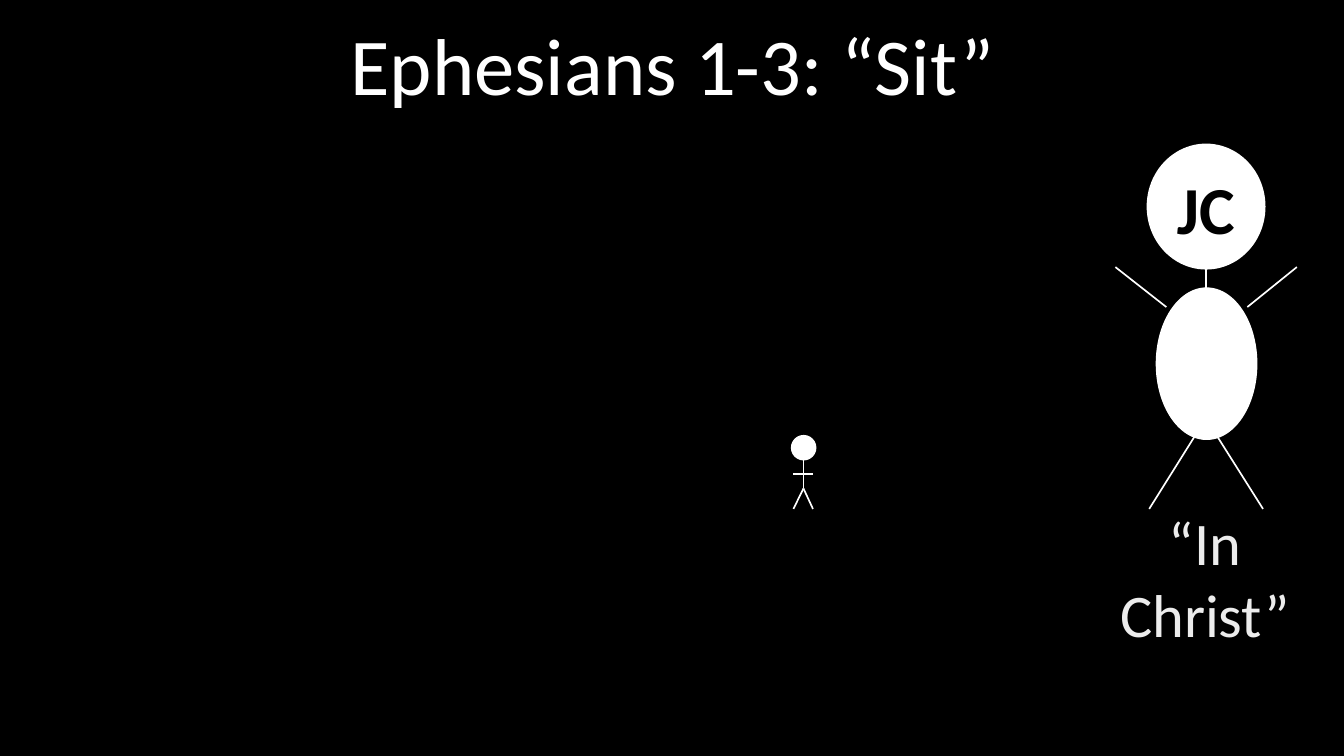
from pptx import Presentation
from pptx import util as u
from pptx.dml.color import RGBColor
from pptx.enum import shapes, text
from pptx.oxml.ns import qn
from lxml import etree

COLORS = {"black": "000000", "white": "FFFFFF", "soft": "ECECEC"}

deck = Presentation()
deck.slide_width, deck.slide_height = u.Cm(28.22), u.Cm(15.88)
page = deck.slides.add_slide(deck.slide_layouts[6])
page.background.fill.solid()
page.background.fill.fore_color.rgb = RGBColor.from_string(COLORS["black"])
white = RGBColor.from_string(COLORS["white"])


def add_text(words, left, top, width, height, size, color, bold=False):
    box = page.shapes.add_textbox(u.Cm(left), u.Cm(top), u.Cm(width), u.Cm(height))
    frame = box.text_frame
    frame.word_wrap = True
    frame.vertical_anchor = text.MSO_ANCHOR.MIDDLE
    para = frame.paragraphs[0]
    para.alignment = text.PP_ALIGN.CENTER
    span = para.add_run()
    span.text = words
    span.font.name = "Calibri"
    span.font.size = u.Pt(size)
    span.font.bold = bold
    span.font.color.rgb = RGBColor.from_string(COLORS[color])


believer_ovals = [(16.66, 9.19, 0.43, 0.43, 3)]
believer_limbs = [
    (16.87, 9.63, 16.87, 10.26),
    (16.87, 10.26, 17.07, 10.69),
    (16.87, 10.26, 16.66, 10.69),
    (16.66, 9.96, 17.07, 9.96),
]
christ_ovals = [(24.13, 3.07, 2.39, 2.54, 3), (24.28, 6.05, 2.11, 3.18, 0.75)]
christ_limbs = [
    (25.32, 5.61, 25.32, 8.79),
    (25.32, 8.79, 26.52, 10.69),
    (25.32, 8.79, 24.13, 10.69),
    (23.42, 5.61, 24.49, 6.45),
    (27.23, 5.61, 26.19, 6.45),
]

for ovals, limbs in [(believer_ovals, believer_limbs), (christ_ovals, christ_limbs)]:
    figure = page.shapes.add_group_shape()
    for left, top, width, height, weight in ovals:
        oval = figure.shapes.add_shape(
            shapes.MSO_SHAPE.OVAL, u.Cm(left), u.Cm(top), u.Cm(width), u.Cm(height))
        oval.shadow.inherit = False
        oval.fill.solid()
        oval.fill.fore_color.rgb = white
        oval.line.color.rgb = white
        oval.line.width = u.Pt(weight)
    for ends in limbs:
        limb = figure.shapes.add_connector(
            shapes.MSO_CONNECTOR.STRAIGHT, *[u.Cm(end) for end in ends])
        limb.line.color.rgb = white
        limb.line.width = u.Pt(1)
        etree.SubElement(limb._element.spPr, qn("a:effectLst"))

add_text("Ephesians 1-3: “Sit”", 0.48, 0.36, 27.28, 1.93, size=48, color="white")
add_text("JC", 23.95, 3.38, 2.74, 1.96, size=40, color="black", bold=True)
add_text("“In Christ”", 22.38, 11.23, 5.84, 1.8, size=36, color="soft")

deck.save("out.pptx")
